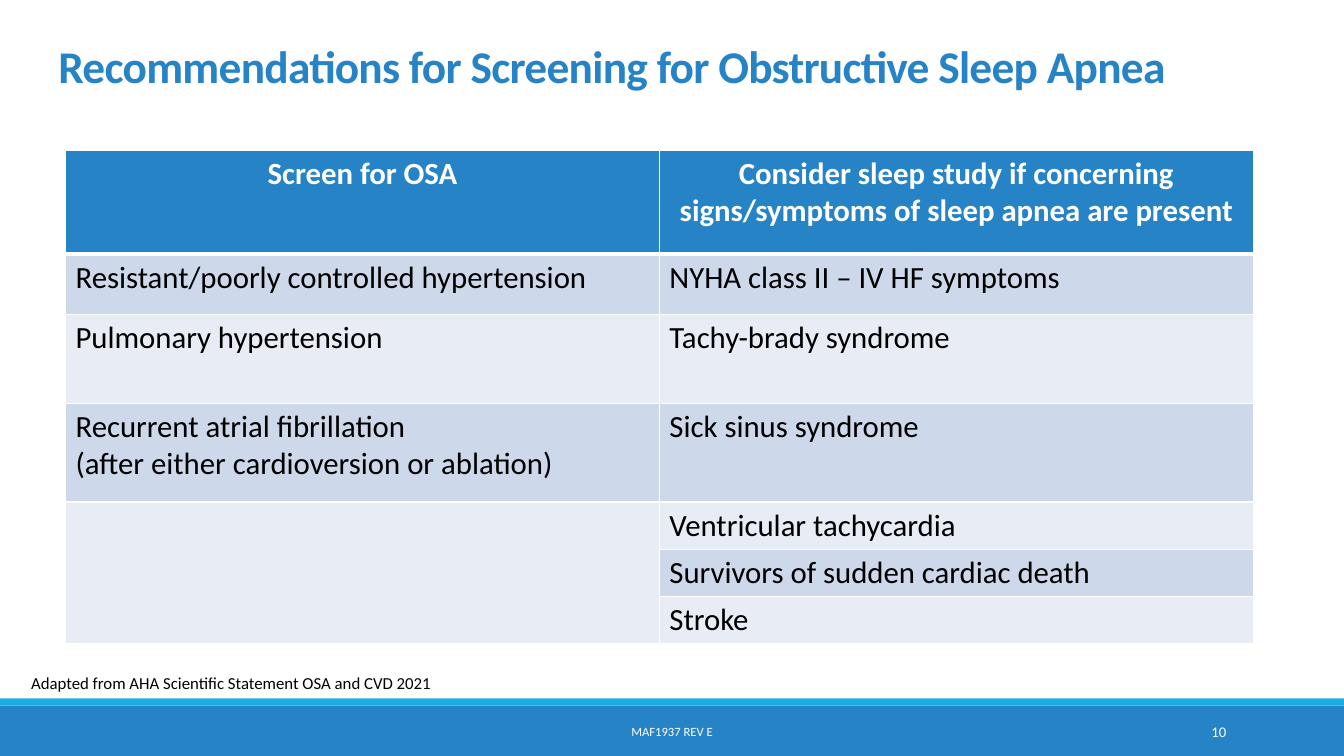
from lxml.etree import SubElement
from pptx import Presentation
from pptx.dml.color import RGBColor
from pptx.enum.shapes import MSO_SHAPE
from pptx.enum.text import MSO_ANCHOR, PP_ALIGN
from pptx.oxml.ns import qn
from pptx.util import Inches, Pt

THEME = {
    "font": "Calibri",
    "blue": "2683C6",
    "cyan": "1CADE4",
    "white": "FFFFFF",
    "black": "000000",
    "bands": ("CDD9EA", "E8EDF5"),
    "title": 32.4,
    "table": 22,
    "source": 12,
    "number": 10.5,
    "footer": 9,
}
WIDTH, HEIGHT = 13.33, 7.5

deck = Presentation()
deck.slide_width, deck.slide_height = Inches(WIDTH), Inches(HEIGHT)
slide = deck.slides.add_slide(deck.slide_layouts[6])


def write(frame, text, size, color, align=PP_ALIGN.LEFT, bold=False):
    frame.text = text
    look = {"name": THEME["font"], "size": Pt(THEME[size]), "bold": bold}
    for paragraph in frame.paragraphs:
        paragraph.alignment = align
        for run in paragraph.runs:
            for key, value in look.items():
                setattr(run.font, key, value)
            run.font.color.rgb = RGBColor.from_string(THEME[color])


def label(text, area, size, color, anchor, align=PP_ALIGN.LEFT, bold=False):
    frame = slide.shapes.add_textbox(*map(Inches, area)).text_frame
    frame.word_wrap = True
    frame.vertical_anchor = anchor
    write(frame, text, size, color, align, bold)
    return frame.paragraphs[0]


band_top, stripe_top = HEIGHT * 14 / 15, HEIGHT * 0.924
for top, bottom, color in ((band_top, HEIGHT, "blue"), (stripe_top, band_top, "cyan")):
    bar = slide.shapes.add_shape(
        MSO_SHAPE.RECTANGLE, 0, Inches(top), deck.slide_width, Inches(bottom - top)
    )
    bar.shadow.inherit = False
    bar.fill.solid()
    bar.fill.fore_color.rgb = RGBColor.from_string(THEME[color])
    bar.line.fill.background()

heading = label(
    "Recommendations for Screening for Obstructive Sleep Apnea",
    (0.48, 0.21, 11.79, 0.76), "title", "blue", MSO_ANCHOR.BOTTOM, bold=True,
)
heading.line_spacing = 0.85
heading.runs[0].font._element.set("spc", "-50")

recommendations = (
    ("Screen for OSA",
     "Consider sleep study if concerning signs/symptoms of sleep apnea are present"),
    ("Resistant/poorly controlled hypertension", "NYHA class II – IV HF symptoms"),
    ("Pulmonary hypertension", "Tachy-brady syndrome"),
    ("Recurrent atrial fibrillation\n(after either cardioversion or ablation)",
     "Sick sinus syndrome"),
    ("", "Ventricular tachycardia"),
    ("", "Survivors of sudden cardiac death"),
    ("", "Stroke"),
)
row_heights = (1.03, 0.6, 0.88, 0.98) + (0.47,) * 3
column_width = 5.89
screening = slide.shapes.add_table(
    len(recommendations), 2, Inches(0.65), Inches(1.49),
    Inches(2 * column_width), Inches(sum(row_heights)),
).table
for column in screening.columns:
    column.width = Inches(column_width)
screening.cell(4, 0).merge(screening.cell(6, 0))

for row, (height, entries) in enumerate(zip(row_heights, recommendations)):
    screening.rows[row].height = Inches(height)
    header = row == 0
    for column, entry in enumerate(entries):
        cell = screening.cell(row, column)
        edge_widths = {"L": 1, "R": 1, "T": 3 if row == 1 else 1, "B": 3 if header else 1}
        for side, points in edge_widths.items():
            edge = SubElement(cell._tc.get_or_add_tcPr(), qn(f"a:ln{side}"), w=str(Pt(points)))
            SubElement(SubElement(edge, qn("a:solidFill")), qn("a:srgbClr"), val=THEME["white"])
        cell.fill.solid()
        cell.fill.fore_color.rgb = RGBColor.from_string(
            THEME["blue"] if header else THEME["bands"][(row - 1) % 2]
        )
        if entry:
            write(
                cell.text_frame, entry, "table", "white" if header else "black",
                PP_ALIGN.CENTER if header else PP_ALIGN.LEFT, header,
            )

label("Adapted from AHA Scientific Statement OSA and CVD 2021",
      (0.21, 6.62, 7.92, 0.3), "source", "black", MSO_ANCHOR.TOP)
label("MAF1937 REV E", (4.03, 7.06, 5.27, 0.4),
      "footer", "white", MSO_ANCHOR.MIDDLE, PP_ALIGN.CENTER)
label("10", (10.83, 7.06, 1.43, 0.4),
      "number", "white", MSO_ANCHOR.MIDDLE, PP_ALIGN.RIGHT)

deck.save("out.pptx")
